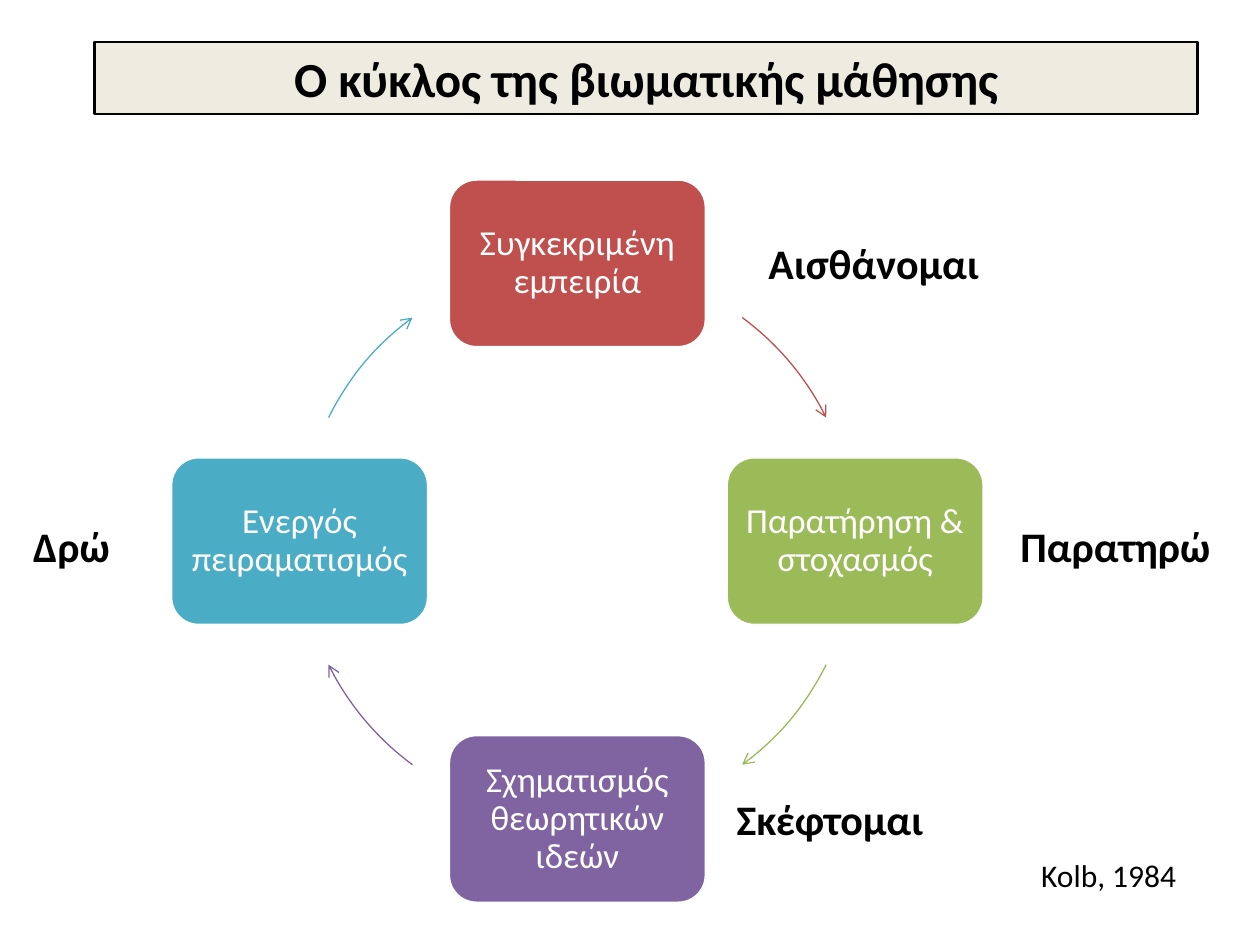
import math

import pptx
import pptx.dml.color
import pptx.enum.shapes
import pptx.enum.text
import pptx.util
from lxml import etree
from pptx.oxml.ns import qn

Cm, Pt = pptx.util.Cm, pptx.util.Pt
RGBColor = pptx.dml.color.RGBColor
MSO_SHAPE = pptx.enum.shapes.MSO_SHAPE
MSO_ANCHOR = pptx.enum.text.MSO_ANCHOR
PP_ALIGN = pptx.enum.text.PP_ALIGN

BLACK = RGBColor(0x00, 0x00, 0x00)
WHITE = RGBColor(0xFF, 0xFF, 0xFF)
CREAM = RGBColor(0xEE, 0xEC, 0xE1)
RED = RGBColor(0xC0, 0x50, 0x4D)
GREEN = RGBColor(0x9B, 0xBB, 0x59)
PURPLE = RGBColor(0x80, 0x64, 0xA2)
TEAL = RGBColor(0x4B, 0xAC, 0xC6)


def set_text(tf, text, align, **font):
    tf.word_wrap = True
    p = tf.paragraphs[0]
    p.alignment = align
    r = p.add_run()
    r.text = text
    for name, value in {"name": "Calibri", **font}.items():
        setattr(r.font, name, value)
    r.font.color.rgb = WHITE if align == PP_ALIGN.CENTER and not font.get("bold") else BLACK
    return p


prs = pptx.Presentation()
prs.slide_width, prs.slide_height = Cm(25.4), Cm(19.05)
s = prs.slides.add_slide(prs.slide_layouts[5])

# Title bar
title = s.shapes.title
title.left, title.top, title.width, title.height = Cm(1.91), Cm(0.85), Cm(22.23), Cm(1.45)
title.fill.solid()
title.fill.fore_color.rgb = CREAM
title.line.color.rgb = BLACK
title.line.width = Pt(1.5)
set_text(title.text_frame, "Ο κύκλος της βιωματικής μάθησης", PP_ALIGN.CENTER,
         size=Pt(28), bold=True)

# Cycle: stages a quarter turn apart, clockwise from the top,
# each followed by an arc arrow (angle of its middle, in degrees)
CENTER_X, CENTER_Y, RADIUS = 11.64, 10.91, 5.6
BOX_W, BOX_H = 5.2, 3.4
HALF_SPAN = 13.6
stages = [
    ("Συγκεκριμένη εμπειρία", RED, 320),
    ("Παρατήρηση & στοχασμός", GREEN, 40),
    ("Σχηματισμός θεωρητικών ιδεών", PURPLE, 140),
    ("Ενεργός πειραματισμός", TEAL, 220),
]
for i, (text, color, middle) in enumerate(stages):
    angle = math.radians(90 * i - 90)
    x = CENTER_X + RADIUS * math.cos(angle)
    y = CENTER_Y + RADIUS * math.sin(angle)
    box = s.shapes.add_shape(MSO_SHAPE.ROUNDED_RECTANGLE, Cm(x - BOX_W / 2),
                             Cm(y - BOX_H / 2), Cm(BOX_W), Cm(BOX_H))
    box.shadow.inherit = False
    box.fill.solid()
    box.fill.fore_color.rgb = color
    box.line.color.rgb = WHITE
    box.line.width = Pt(2)
    tf = box.text_frame
    tf.vertical_anchor = MSO_ANCHOR.MIDDLE
    for side in ("left", "top", "right", "bottom"):
        setattr(tf, f"margin_{side}", Cm(0.2))
    p = set_text(tf, text, PP_ALIGN.CENTER, size=Pt(20))
    p.line_spacing = 0.9

    arc = s.shapes.add_shape(MSO_SHAPE.ARC, Cm(CENTER_X - RADIUS), Cm(CENTER_Y - RADIUS),
                             Cm(2 * RADIUS), Cm(2 * RADIUS))
    arc.shadow.inherit = False
    arc.fill.background()
    # An adjustment of 0.6 is one degree
    arc.adjustments[0] = (middle - HALF_SPAN) * 0.6
    arc.adjustments[1] = (middle + HALF_SPAN) * 0.6
    arc.line.color.rgb = color
    arc.line.width = Pt(0.75)
    etree.SubElement(arc.line._get_or_add_ln(), qn("a:tailEnd"), type="arrow")

# Labels beside the stages, and the source
labels = [
    ("Αισθάνομαι", 15.24, 4.66, 5.08, 24, True),
    ("Παρατηρώ", 20.32, 10.37, 4.66, 24, True),
    ("Σκέφτομαι", 14.6, 15.88, 4.66, 24, True),
    ("Δρώ", 0.42, 10.37, 2.75, 24, True),
    ("Kolb, 1984", 20.74, 17.14, 3.6, 18, False),
]
for text, left, top, width, size, bold in labels:
    height = 1.27 if bold else 1.03
    tb = s.shapes.add_textbox(Cm(left), Cm(top), Cm(width), Cm(height))
    set_text(tb.text_frame, text, PP_ALIGN.LEFT, size=Pt(size), bold=bold)

prs.save("out.pptx")
